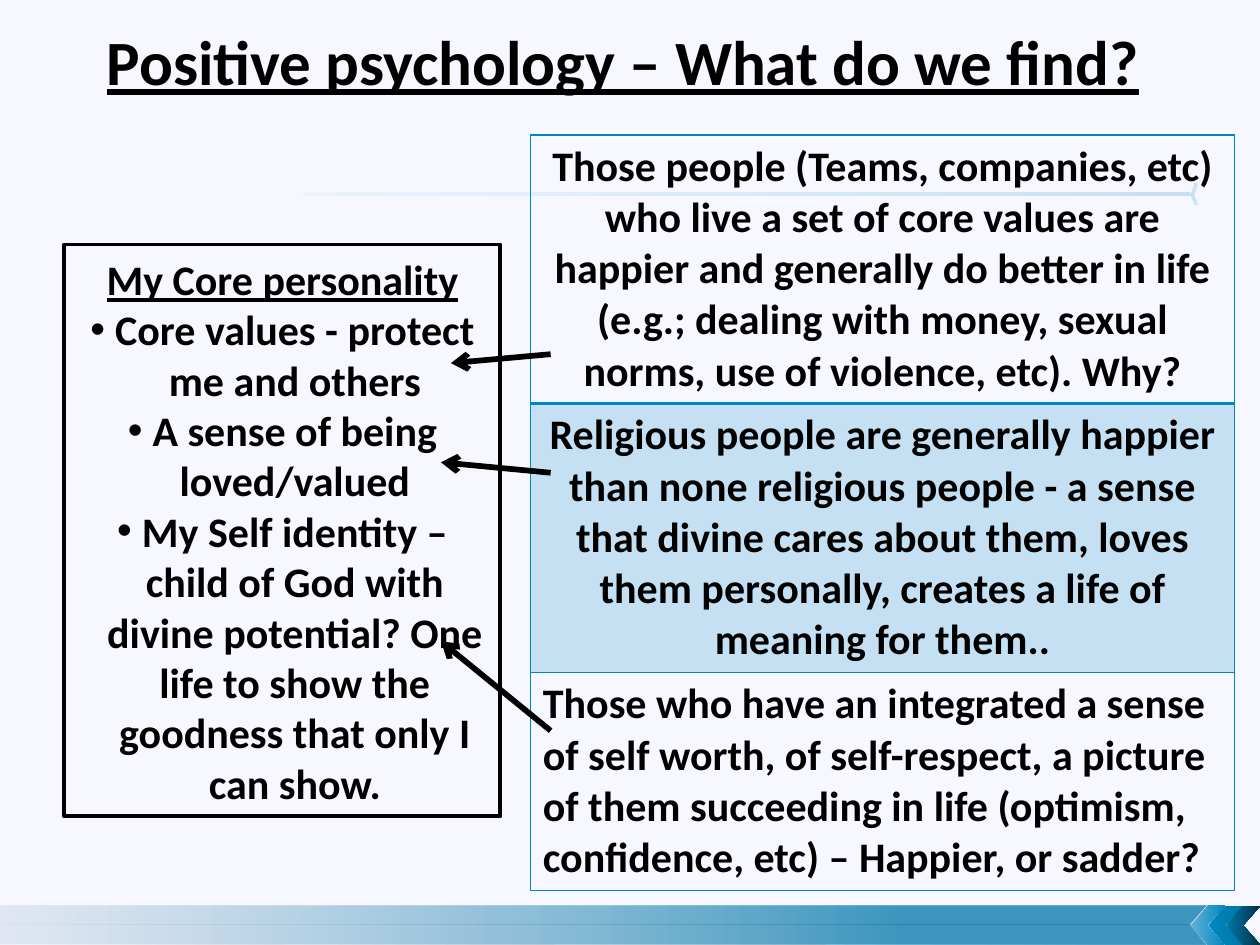
from lxml.etree import SubElement as Sub
from pptx import Presentation
from pptx.dml.color import RGBColor
from pptx.enum.shapes import MSO_CONNECTOR as Link, MSO_SHAPE as Form
from pptx.enum.text import MSO_ANCHOR as Anchor, PP_ALIGN as Align
from pptx.oxml import parse_xml
from pptx.oxml.ns import qn
from pptx.util import Cm, Pt

NS = 'xmlns:a="http://schemas.openxmlformats.org/drawingml/2006/main"'
BLUE, DEEP, PALE, BLACK = "0087BF", "0077A9", "CCD9E8", "000000"
TITLE = "Positive psychology – What do we find?"
CORE = [
    "My Core personality",
    "Core values - protect me and others",
    "A sense of being loved/valued",
    "My Self identity – child of God with divine potential? "
    "One life to show the goodness that only I can show.",
]
ROWS = [
    ("Those people (Teams, companies, etc) who live a set of core values are "
     "happier and generally do better in life (e.g.; dealing with money, "
     "sexual norms, use of violence, etc). Why?", 5.41, Align.CENTER),
    ("Religious people are generally happier than none religious people - a "
     "sense that divine cares about them, loves them personally, creates a "
     "life of meaning for them..", 5.33, Align.CENTER),
    ("Those who have an integrated a sense of self worth, of self-respect, a "
     "picture of them succeeding in life (optimism, confidence, etc) – "
     "Happier, or sadder?", 4.32, Align.LEFT),
]
ARROWS = [(7.14, 9.09, 7.32), (9.53, 8.89, 9.32), (14.73, 8.89, 12.93)]
BARS = [(19.05, 19.03), (18.26, 18.26)]
TIPS = [
    [(0, BLUE, 60), (100, BLUE, 100)],
    [(0, BLUE, 100), (100, DEEP, 100)],
    [(0, DEEP, 100), (100, "003246", 100)],
]
FONT = {"name": "Calibri", "size": Pt(24), "bold": True}


def tint(text):
    return RGBColor.from_string(text)


def write(para, text, **more):
    run = para.add_run()
    run.text = text
    for key, value in {**FONT, **more}.items():
        setattr(run.font, key, value)
    run.font.color.rgb = tint(BLACK)


def fade(shape, stops, flip=False):
    shape.shadow.inherit = False
    shape.line.fill.background()
    marks = "".join(
        f'<a:gs pos="{at * 1000}"><a:srgbClr val="{color}">'
        f'<a:alpha val="{alpha * 1000}"/></a:srgbClr></a:gs>'
        for at, color, alpha in stops)
    props = shape._element.spPr
    props.insert(2, parse_xml(
        f'<a:gradFill {NS} rotWithShape="1"><a:gsLst>{marks}</a:gsLst>'
        '<a:lin ang="10800000" scaled="0"/></a:gradFill>'))
    if flip:
        props.find(qn("a:xfrm")).set("flipH", "1")


def edge(cell, top, base):
    props = cell._tc.get_or_add_tcPr()
    sides = {"lnL": 1, "lnR": 1, "lnT": top, "lnB": base}
    for spot, (side, wide) in enumerate(sides.items()):
        props.insert(spot, parse_xml(
            f'<a:{side} {NS} w="{Pt(wide)}"><a:solidFill>'
            f'<a:srgbClr val="{BLUE}"/></a:solidFill></a:{side}>'))


def place(shapes, form, *box):
    return shapes.add_shape(form, *map(Cm, box))


def draw_base(shapes):
    for right, left in BARS:
        pen = shapes.build_freeform(Cm(24.33), Cm(right))
        pen.add_line_segments([(Cm(x), Cm(y)) for x, y in (
            (0, left), (0, 18.64), (23.98, 18.64))])
        fade(pen.convert_to_shape(), [(25, DEEP, 75), (100, PALE, 50)])
    for i, stops in enumerate(TIPS):
        tip = place(shapes, Form.CHEVRON, 24 + 0.36 * i, 18.26, 0.69, 0.79)
        fade(tip, stops, True)
    tip = place(shapes, Form.CHEVRON, 24, 3.71, 0.15, 0.41)
    fade(tip, [(0, BLUE, 20), (100, BLUE, 15)], True)
    rule = place(shapes, Form.RECTANGLE, 6.12, 3.89, 17.86, 0.05)
    fade(rule, [(0, BLUE, 20), (100, BLUE, 4)])


def draw_title(title):
    title.left, title.top, title.width, title.height = map(
        Cm, (1.9, 0.33, 21.56, 1.8))
    frame = title.text_frame
    frame.word_wrap = False
    frame.vertical_anchor = Anchor.TOP
    para = frame.paragraphs[0]
    para.alignment = Align.LEFT
    write(para, TITLE, size=Pt(36), underline=True)


def draw_core(shapes):
    box = place(shapes, Form.RECTANGLE, 1.3, 4.93, 8.79, 11.53)
    box.shadow.inherit = False
    box.fill.background()
    box.line.color.rgb = tint(BLACK)
    box.line.width = Pt(2.25)
    frame = box.text_frame
    frame.word_wrap = True
    frame.vertical_anchor = Anchor.MIDDLE
    for i, text in enumerate(CORE):
        para = frame.add_paragraph() if i else frame.paragraphs[0]
        para.alignment = Align.CENTER
        props = para._p.get_or_add_pPr()
        props.set("marL", str(Cm(0.5)))
        props.set("indent", str(-Cm(0.5)))
        if i:
            Sub(props, qn("a:buFont"), typeface="Arial")
            Sub(props, qn("a:buChar"), char="•")
        write(para, text, underline=not i)


def draw_table(shapes):
    high = sum(row[1] for row in ROWS)
    grid = shapes.add_table(
        len(ROWS), 1, *map(Cm, (10.69, 2.72, 14.2, high))).table
    grid.first_row = grid.horz_banding = False
    for i, (text, tall, align) in enumerate(ROWS):
        grid.rows[i].height = Cm(tall)
        cell = grid.cell(i, 0)
        para = cell.text_frame.paragraphs[0]
        para.alignment = align
        write(para, text)
        if i == 1:
            cell.fill.solid()
            cell.fill.fore_color.rgb = tint(BLUE)
            color = cell._tc.tcPr.find(".//" + qn("a:srgbClr"))
            Sub(color, qn("a:alpha"), val="20000")
        else:
            cell.fill.background()
        edge(cell, 2 if i == 1 else 1, 1 if i else 2)


def draw_arrows(shapes):
    for start, x, y in ARROWS:
        line = shapes.add_connector(
            Link.STRAIGHT, *map(Cm, (11.1, start, x, y)))
        line.line.color.rgb = tint(BLACK)
        line.line.width = Pt(3.25)
        Sub(line.line._get_or_add_ln(), qn("a:tailEnd"), type="arrow")
        Sub(line._element.spPr, qn("a:effectLst"))


def main():
    deck = Presentation()
    deck.slide_width, deck.slide_height = Cm(25.4), Cm(19.05)
    slide = deck.slides.add_slide(deck.slide_layouts[5])
    back = slide.background.fill
    back.solid()
    back.fore_color.rgb = tint("F7F7FF")
    draw_base(slide.shapes)
    draw_title(slide.shapes.title)
    draw_core(slide.shapes)
    draw_table(slide.shapes)
    draw_arrows(slide.shapes)
    deck.save("out.pptx")


if __name__ == "__main__":
    main()
